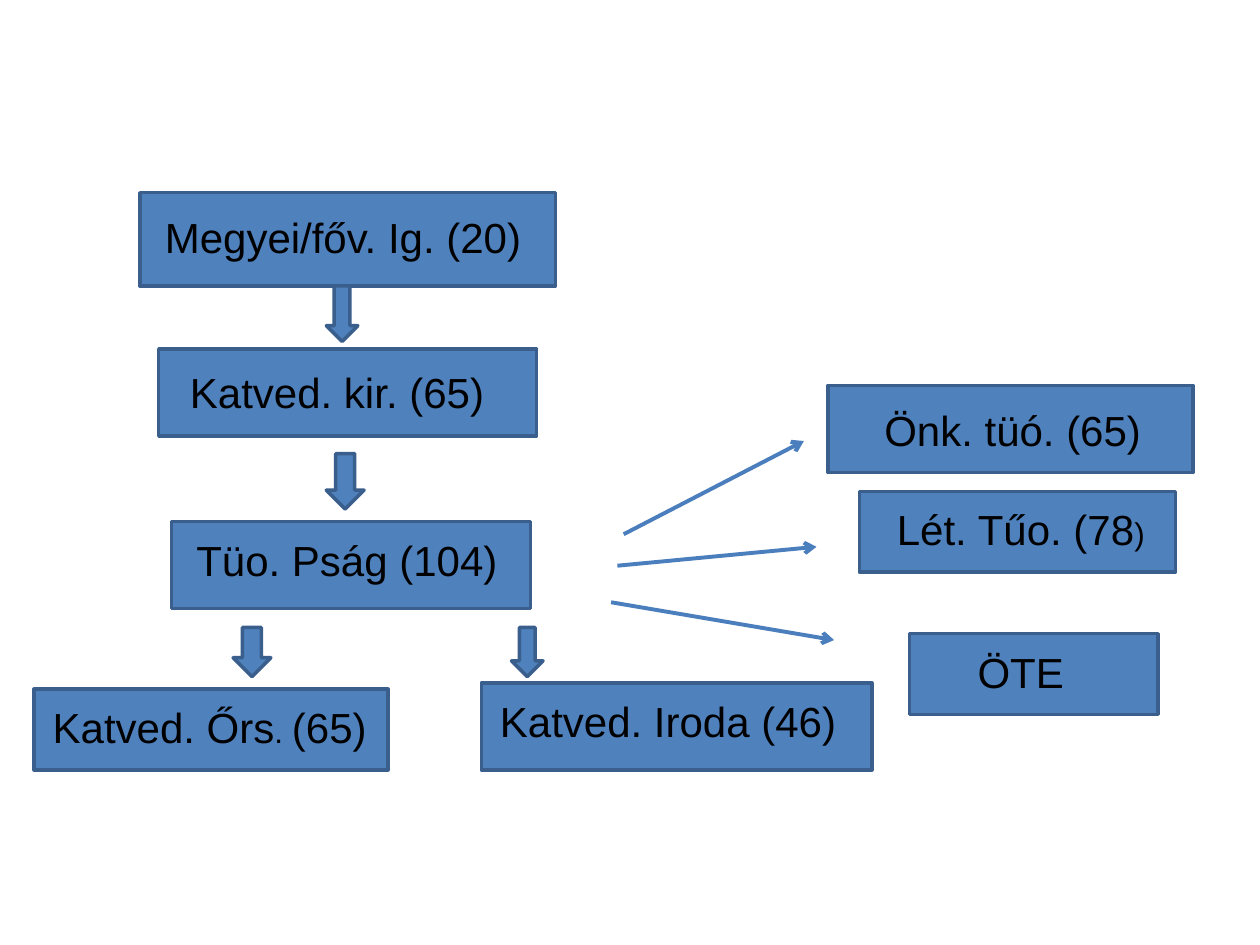
from typing import NamedTuple

from lxml import etree
from pptx import Presentation
from pptx import util as u
from pptx.dml.color import RGBColor
from pptx.enum import shapes, text
from pptx.oxml.ns import qn

BOX_BLUE = RGBColor(0x4F, 0x81, 0xBD)
BORDER_BLUE = RGBColor(0x3A, 0x5F, 0x8C)
LINK_BLUE = RGBColor(0x4B, 0x7E, 0xBC)
BLACK = RGBColor(0, 0, 0)
FONT = "Arial"
LARGE, SMALL = 24, 18


class Frame(NamedTuple):
    left: float
    top: float
    width: float
    height: float

    def lengths(self) -> list[u.Length]:
        return [u.Inches(value) for value in self]


class Unit(NamedTuple):
    """An organisational unit: its box, its label frame and (text, size) runs."""
    box: Frame
    label: Frame
    runs: list[tuple[str, int]]


class Link(NamedTuple):
    x1: float
    y1: float
    x2: float
    y2: float


UNITS = [
    Unit(Frame(1.11, 1.53, 3.3, 0.74), Frame(1.21, 1.63, 3.06, 0.51),
         [("Megyei/főv. Ig. (20)", LARGE)]),
    Unit(Frame(1.26, 2.77, 3, 0.69), Frame(1.41, 2.86, 2.56, 0.51),
         [("Katved. kir. (65)", LARGE)]),
    Unit(Frame(1.36, 4.14, 2.85, 0.69), Frame(1.46, 4.19, 2.62, 0.51),
         [("Tüo. Pság (104)", LARGE)]),
    Unit(Frame(0.27, 5.47, 2.81, 0.64), Frame(0.32, 5.52, 2.72, 0.5),
         [("Katved. Őrs", LARGE), (". ", SMALL), ("(65)", LARGE)]),
    Unit(Frame(3.82, 5.42, 3.1, 0.69), Frame(3.87, 5.47, 2.9, 0.51),
         [("Katved. Iroda (46)", LARGE)]),
    Unit(Frame(6.57, 3.06, 2.9, 0.69), Frame(6.92, 3.16, 2.26, 0.51),
         [("Önk. tüó. (65)", LARGE)]),
    Unit(Frame(6.82, 3.9, 2.51, 0.64), Frame(7.02, 3.95, 2.19, 0.51),
         [("Lét. Tűo. (78", LARGE), (")", SMALL)]),
    Unit(Frame(7.22, 5.03, 1.97, 0.64), Frame(7.66, 5.08, 0.89, 0.51),
         [("ÖTE", LARGE)]),
]

DOWN_ARROWS = [
    Frame(2.59, 2.27, 0.25, 0.44),
    Frame(2.59, 3.6, 0.3, 0.44),
    Frame(1.85, 4.98, 0.3, 0.39),
    Frame(4.06, 4.98, 0.25, 0.39),
]

LINKS = [
    Link(4.95, 4.24, 6.38, 3.5),
    Link(4.9, 4.49, 6.48, 4.34),
    Link(4.85, 4.78, 6.62, 5.08),
]


def add_block(slide, kind: shapes.MSO_SHAPE, frame: Frame) -> None:
    block = slide.shapes.add_shape(kind, *frame.lengths())
    block.shadow.inherit = False
    block.fill.solid()
    block.fill.fore_color.rgb = BOX_BLUE
    block.line.color.rgb = BORDER_BLUE
    block.line.width = u.Pt(2)


def add_label(slide, unit: Unit) -> None:
    label = slide.shapes.add_textbox(*unit.label.lengths()).text_frame
    label.word_wrap = False
    label.auto_size = text.MSO_AUTO_SIZE.SHAPE_TO_FIT_TEXT
    for words, size in unit.runs:
        run = label.paragraphs[0].add_run()
        run.text = words
        run.font.name = FONT
        run.font.size = u.Pt(size)
        run.font.color.rgb = BLACK


def add_link(slide, link: Link) -> None:
    connector = slide.shapes.add_connector(
        shapes.MSO_CONNECTOR.STRAIGHT, *[u.Inches(value) for value in link])
    connector.line.color.rgb = LINK_BLUE
    connector.line.width = u.Pt(2.25)
    etree.SubElement(connector.line._get_or_add_ln(), qn("a:tailEnd"), type="arrow")
    etree.SubElement(connector._element.spPr, qn("a:effectLst"))


def main() -> None:
    deck = Presentation()
    deck.slide_width, deck.slide_height = u.Inches(10), u.Inches(7.5)
    slide = deck.slides.add_slide(deck.slide_layouts[6])
    for unit in UNITS:
        add_block(slide, shapes.MSO_SHAPE.RECTANGLE, unit.box)
        add_label(slide, unit)
    for arrow in DOWN_ARROWS:
        add_block(slide, shapes.MSO_SHAPE.DOWN_ARROW, arrow)
    for link in LINKS:
        add_link(slide, link)
    deck.save("out.pptx")


if __name__ == "__main__":
    main()
